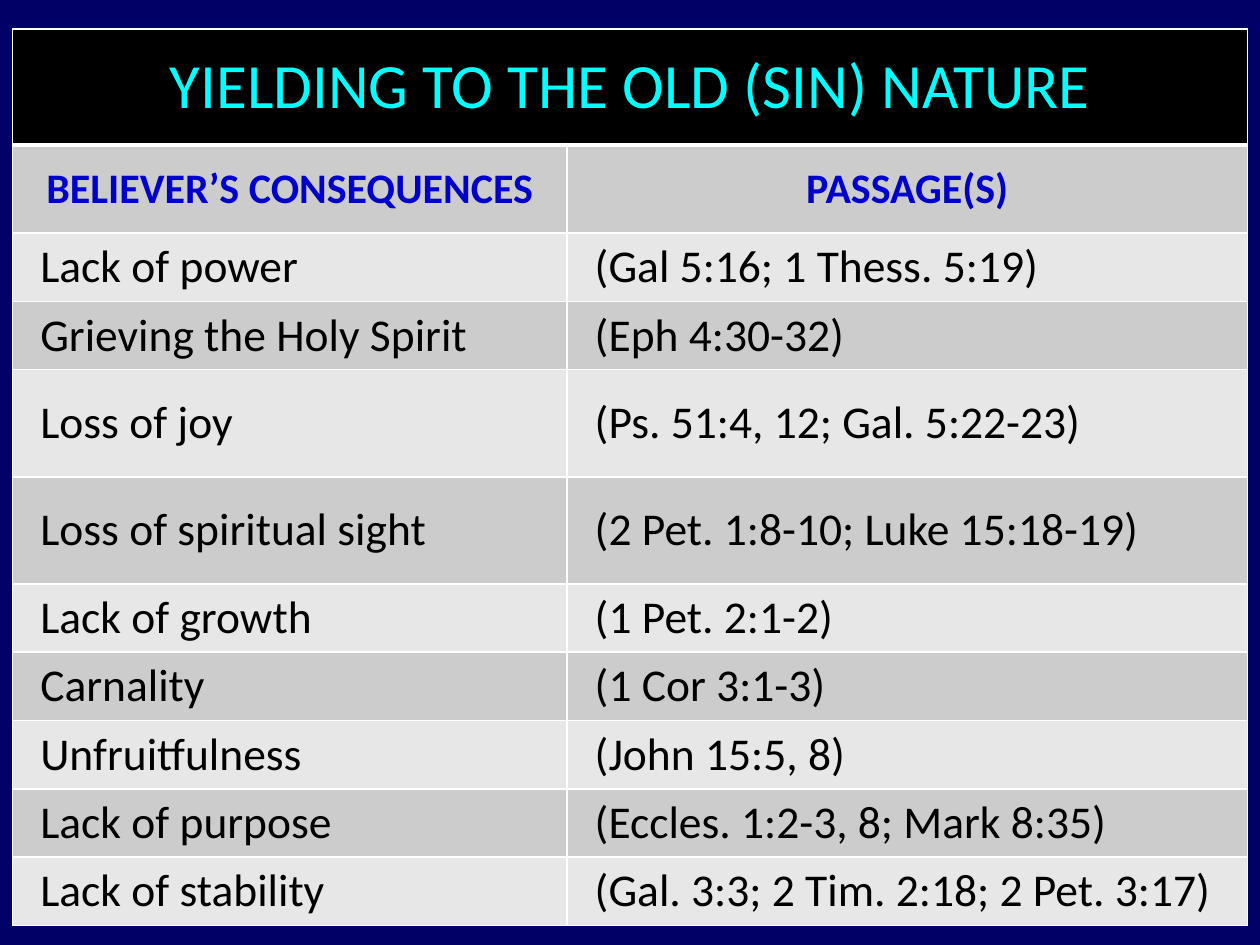
from dataclasses import dataclass

from lxml.etree import SubElement
from pptx import Presentation
from pptx.dml.color import RGBColor as Rgb
from pptx.enum.text import MSO_ANCHOR as Anchor, PP_ALIGN as Align
from pptx.oxml.ns import qn
from pptx.util import Inches, Pt


@dataclass(frozen=True)
class Theme:
    font: str = "Calibri"
    background: str = "000066"
    title_fill: str = "000000"
    title_text: str = "00FFFF"
    header_text: str = "0000CC"
    body_text: str = "000000"
    dark_band: str = "CCCCCC"
    light_band: str = "E7E7E7"
    border: str = "FFFFFF"
    title_size: int = 36
    header_size: int = 24
    body_size: int = 26


TITLE = "YIELDING TO THE OLD (SIN) NATURE"
HEADERS = ("BELIEVER’S CONSEQUENCES", "PASSAGE(S)")
CONSEQUENCES = [
    ("Lack of power", "(Gal 5:16; 1 Thess. 5:19)"),
    ("Grieving the Holy Spirit", "(Eph 4:30-32)"),
    ("Loss of joy", "(Ps. 51:4, 12; Gal. 5:22-23)"),
    ("Loss of spiritual sight", "(2 Pet. 1:8-10; Luke 15:18-19)"),
    ("Lack of growth", "(1 Pet. 2:1-2)"),
    ("Carnality", "(1 Cor 3:1-3)"),
    ("Unfruitfulness", "(John 15:5, 8)"),
    ("Lack of purpose", "(Eccles. 1:2-3, 8; Mark 8:35)"),
    ("Lack of stability", "(Gal. 3:3; 2 Tim. 2:18; 2 Pet. 3:17)"),
]
COLUMN_WIDTHS = (4.4, 5.4)
TITLE_HEIGHT, HEADER_HEIGHT, ROW_HEIGHT, TALL_HEIGHT = 0.92, 0.7, 0.47, 0.85
TALL_ROWS = ("Loss of joy", "Loss of spiritual sight")


def write_text(frame, text, *, font, size, color, bold=False,
               align=Align.LEFT, indent=0):
    paragraph = frame.paragraphs[0]
    paragraph.alignment = align
    if indent:
        properties = paragraph._p.get_or_add_pPr()
        properties.set("marL", str(Inches(indent)))
        properties.set("indent", "0")
    run = paragraph.add_run()
    run.text = text
    run.font.name = font
    run.font.size = Pt(size)
    run.font.bold = bold
    run.font.color.rgb = Rgb.from_string(color)


class SlideBuilder:
    def __init__(self, slide, theme):
        self.slide = slide
        self.theme = theme

    def background(self):
        fill = self.slide.background.fill
        fill.solid()
        fill.fore_color.rgb = Rgb.from_string(self.theme.background)

    def table(self, left, top, width, height, column_widths, row_heights):
        frame = self.slide.shapes.add_table(
            len(row_heights), len(column_widths),
            Inches(left), Inches(top), Inches(width), Inches(height))
        table = frame.table
        for column, column_width in zip(table.columns, column_widths):
            column.width = Inches(column_width)
        for row, row_height in zip(table.rows, row_heights):
            row.height = Inches(row_height)
        frame.width, frame.height = Inches(width), Inches(height)
        return table

    def cell(self, cell, fill, top=1, bottom=1):
        cell.vertical_anchor = Anchor.MIDDLE
        self.borders(cell, L=1, R=1, T=top, B=bottom)
        cell.fill.solid()
        cell.fill.fore_color.rgb = Rgb.from_string(fill)

    def borders(self, cell, **widths):
        properties = cell._tc.get_or_add_tcPr()
        for side, width in widths.items():
            line = SubElement(properties, qn(f"a:ln{side}"), w=str(Pt(width)))
            fill = SubElement(line, qn("a:solidFill"))
            SubElement(fill, qn("a:srgbClr"), val=self.theme.border)

    def text(self, cell, text, **style):
        write_text(cell.text_frame, text, font=self.theme.font, **style)


def main():
    presentation = Presentation()
    presentation.slide_width, presentation.slide_height = Inches(10), Inches(7.5)
    theme = Theme()
    builder = SlideBuilder(
        presentation.slides.add_slide(presentation.slide_layouts[6]), theme)
    builder.background()

    # Table grid
    body_heights = [TALL_HEIGHT if name in TALL_ROWS else ROW_HEIGHT
                    for name, _ in CONSEQUENCES]
    table = builder.table(0.1, 0.23, 9.79, 7.05, COLUMN_WIDTHS,
                          [TITLE_HEIGHT, HEADER_HEIGHT, *body_heights])

    # Title row across both columns
    title = table.cell(0, 0)
    title.merge(table.cell(0, 1))
    for column in range(2):
        builder.cell(table.cell(0, column), theme.title_fill, bottom=3)
    builder.text(title, TITLE, size=theme.title_size,
                 color=theme.title_text, align=Align.CENTER)

    # Column headings
    for column, heading in enumerate(HEADERS):
        cell = table.cell(1, column)
        builder.cell(cell, theme.dark_band, top=3)
        builder.text(cell, heading, size=theme.header_size, bold=True,
                     color=theme.header_text, align=Align.CENTER)

    # Banded rows of consequences and passages
    for row, entries in enumerate(CONSEQUENCES, start=2):
        band = theme.dark_band if row % 2 else theme.light_band
        for column, entry in enumerate(entries):
            cell = table.cell(row, column)
            builder.cell(cell, band)
            builder.text(cell, entry, size=theme.body_size,
                         color=theme.body_text, indent=0.12)

    presentation.save("out.pptx")


if __name__ == "__main__":
    main()
